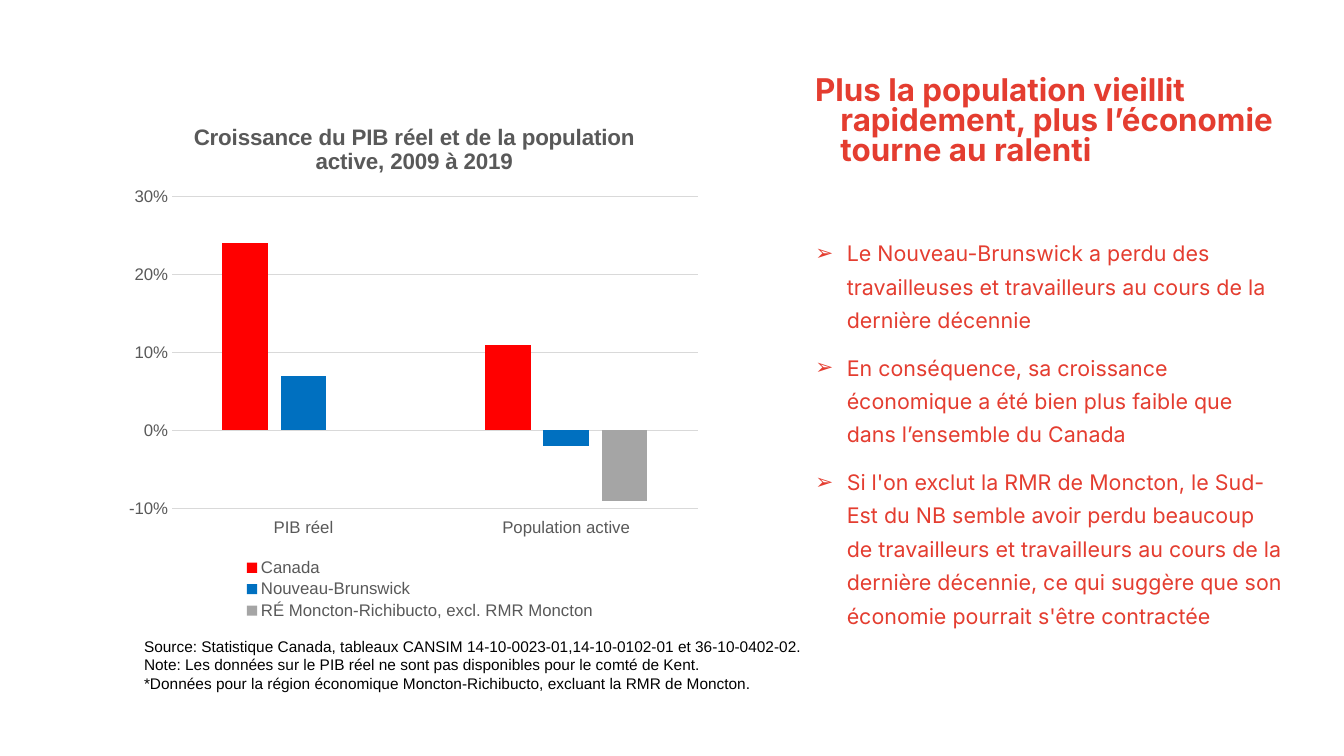
from dataclasses import dataclass

from lxml.etree import SubElement
from pptx import Presentation
from pptx.chart.data import CategoryChartData
from pptx.dml.color import RGBColor as RGB
from pptx.enum.chart import XL_CHART_TYPE as ChartType
from pptx.enum.chart import XL_LEGEND_POSITION as LegendPos
from pptx.enum.chart import XL_TICK_LABEL_POSITION as LabelPos
from pptx.enum.chart import XL_TICK_MARK as Tick
from pptx.oxml import parse_xml
from pptx.oxml.ns import nsdecls, qn
from pptx.util import Cm, Pt


@dataclass(frozen=True)
class Theme:
    heading_font: str = "Inter"
    chart_font: str = "Arial"
    accent: str = "E43D30"
    ink: str = "000000"
    grey: str = "595959"
    rule: str = "D9D9D9"
    series: tuple = ("FF0000", "0070C0", "A5A5A5")
    heading: float = 22.4
    body: float = 15.3
    chart_title: float = 16
    axis: float = 12
    source: float = 11


def apply(obj, **values):
    for name, value in values.items():
        setattr(obj, name, value)


def set_font(font, name, size, color, bold=False):
    apply(font, name=name, size=Pt(size), bold=bold)
    font.color.rgb = RGB.from_string(color)


def set_line(line, color):
    line.color.rgb = RGB.from_string(color)
    line.width = Pt(0.75)


def set_layout(element, x, y, w, h, inner=False):
    """Place a chart part by fractions of the chart area."""
    for old in element.findall(qn("c:layout")):
        element.remove(old)
    target = '<c:layoutTarget val="inner"/>' if inner else ""
    modes = '<c:xMode val="edge"/><c:yMode val="edge"/>'
    sizes = "".join(f'<c:{k} val="{v}"/>' for k, v in zip("xywh", (x, y, w, h)))
    layout = parse_xml(f'<c:layout {nsdecls("c")}><c:manualLayout>'
                       f"{target}{modes}{sizes}</c:manualLayout></c:layout>")
    before = element.find(qn("c:legendPos"))
    element.insert(0 if before is None else element.index(before) + 1, layout)


class SlideBuilder:
    def __init__(self, slide, theme):
        self.s, self.theme = slide, theme

    def text(self, box, lines, font, bullet=None, left=0, hang=0, **spacing):
        tf = self.s.shapes.add_textbox(*map(Cm, box)).text_frame
        tf.word_wrap = True
        for i, line in enumerate(lines):
            p = tf.paragraphs[0] if i == 0 else tf.add_paragraph()
            pPr = p._p.get_or_add_pPr()
            pPr.set("marL", str(Cm(left)))
            pPr.set("indent", str(-Cm(hang)))
            if bullet:
                color = SubElement(pPr, qn("a:buClr"))
                SubElement(color, qn("a:srgbClr"), val=self.theme.accent)
                SubElement(pPr, qn("a:buFont"), typeface="Arial")
                SubElement(pPr, qn("a:buChar"), char=bullet)
            apply(p, **spacing)
            if i == 0:
                p.space_before = Pt(0)
            r = p.add_run()
            r.text = line
            set_font(r.font, *font)

    def column_chart(self, box, title, categories, series):
        t = self.theme
        label = (t.chart_font, t.axis, t.grey)
        data = CategoryChartData(number_format="0%")
        data.categories = categories
        for name, values in series:
            data.add_series(name, values)
        chart = self.s.shapes.add_chart(
            ChartType.COLUMN_CLUSTERED, *map(Cm, box), data).chart
        set_font(chart.font, *label)

        # Title
        r = chart.chart_title.text_frame.paragraphs[0].add_run()
        r.text = title
        set_font(r.font, t.chart_font, t.chart_title, t.grey, True)

        # Columns
        plot = chart.plots[0]
        apply(plot, gap_width=219, overlap=-27, vary_by_categories=False)
        for ser, color in zip(plot.series, t.series):
            ser.invert_if_negative = False
            ser.format.fill.solid()
            ser.format.fill.fore_color.rgb = RGB.from_string(color)

        # Axes
        cat, val = chart.category_axis, chart.value_axis
        for axis in (cat, val):
            apply(axis, major_tick_mark=Tick.NONE, minor_tick_mark=Tick.NONE)
            set_font(axis.tick_labels.font, *label)
        cat.tick_label_position = LabelPos.LOW
        set_line(cat.format.line, t.rule)
        apply(val, minimum_scale=-0.1, maximum_scale=0.3, major_unit=0.1)
        apply(val.tick_labels, number_format="0%", number_format_is_linked=False)
        val.format.line.fill.background()
        set_line(val.major_gridlines.format.line, t.rule)

        # Legend and plot area
        chart.has_legend = True
        legend = chart.legend
        apply(legend, position=LegendPos.BOTTOM, include_in_layout=False)
        set_font(legend.font, *label)
        set_layout(legend._element, 0.2, 0.87, 0.62, 0.13)
        set_layout(plot._element.getparent(), 0.09, 0.18, 0.89, 0.6, True)


def main():
    prs = Presentation()
    apply(prs, slide_width=Cm(33.87), slide_height=Cm(19.05))
    theme = Theme()
    slide = SlideBuilder(prs.slides.add_slide(prs.slide_layouts[6]), theme)

    # Heading
    slide.text(
        (19.66, 1.83, 12.93, 3.3),
        ["Plus la population vieillit rapidement, plus l’économie tourne au ralenti"],
        (theme.heading_font, theme.heading, theme.accent, True),
        left=1.27, hang=0.64, line_spacing=0.8)

    # Key points
    slide.text(
        (19.66, 5.74, 12.93, 11),
        ["Le Nouveau-Brunswick a perdu des travailleuses et travailleurs au cours "
         "de la dernière décennie",
         "En conséquence, sa croissance économique a été bien plus faible que dans "
         "l’ensemble du Canada",
         "Si l'on exclut la RMR de Moncton, le Sud-Est du NB semble avoir perdu "
         "beaucoup de travailleurs et travailleurs au cours de la dernière décennie, "
         "ce qui suggère que son économie pourrait s'être contractée"],
        (theme.heading_font, theme.body, theme.accent),
        bullet="➢", left=1.43, hang=0.79, line_spacing=1.3, space_before=Pt(10))

    # Growth chart
    slide.column_chart(
        (3, 2.59, 14.88, 13.11),
        "Croissance du PIB réel et de la population active, 2009 à 2019",
        ["PIB réel", "Population active"],
        [("Canada", (0.24, 0.11)),
         ("Nouveau-Brunswick", (0.07, -0.02)),
         ("RÉ Moncton-Richibucto, excl. RMR Moncton", (None, -0.09))])

    # Source and notes
    slide.text(
        (3.38, 15.93, 17.6, 1.68),
        ["Source: Statistique Canada, tableaux CANSIM "
         "14-10-0023-01,14-10-0102-01 et 36-10-0402-02.",
         "Note: Les données sur le PIB réel ne sont pas disponibles pour le comté de Kent.",
         "*Données pour la région économique Moncton-Richibucto, excluant la RMR de Moncton."],
        (theme.chart_font, theme.source, theme.ink))

    prs.save("out.pptx")


if __name__ == "__main__":
    main()
